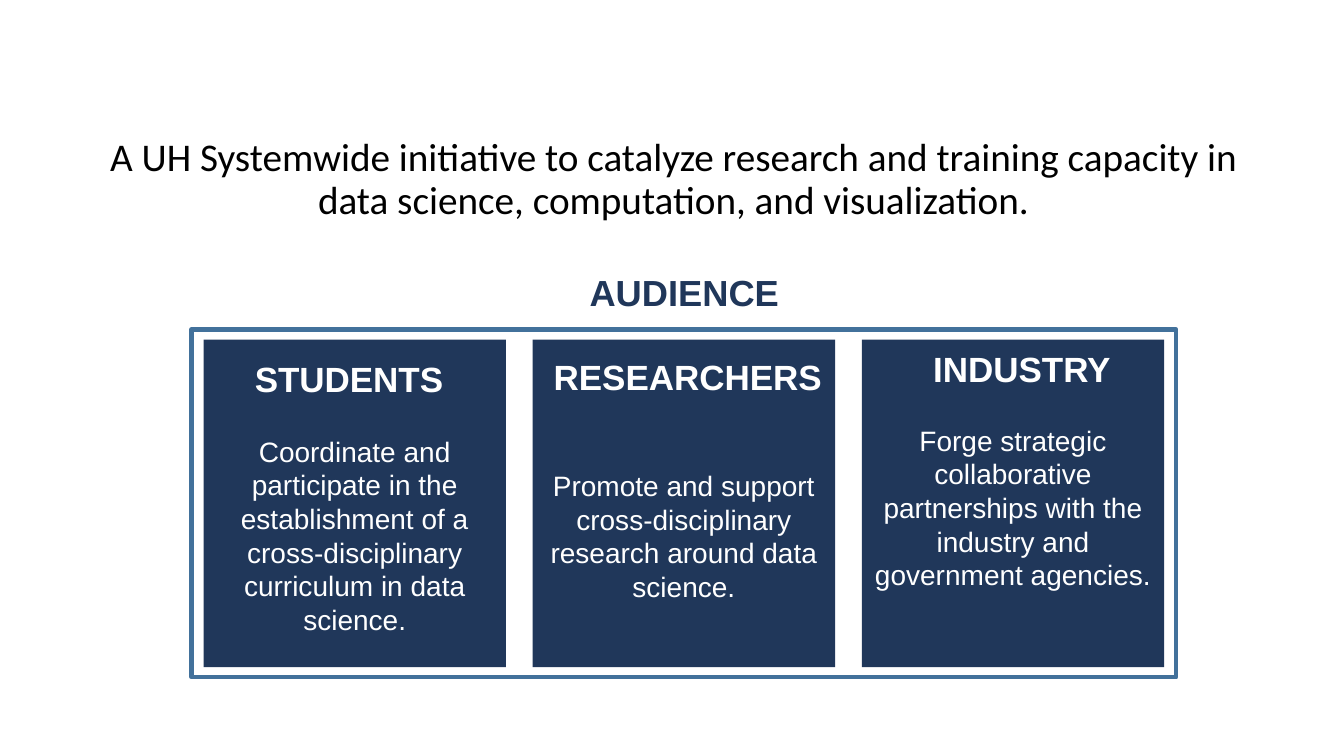
import dataclasses

import lxml.etree
import pptx
import pptx.dml.color
import pptx.enum.shapes
import pptx.enum.text
import pptx.oxml.ns
import pptx.util

Pt = pptx.util.Pt
CENTER = pptx.enum.text.PP_ALIGN.CENTER
LEFT = pptx.enum.text.PP_ALIGN.LEFT


@dataclasses.dataclass(frozen=True)
class Theme:
    navy: str = "20375A"
    frame_blue: str = "42719B"
    white: str = "FFFFFF"
    black: str = "000000"
    statement_font: str = "Calibri"
    label_font: str = "Arial"
    statement_size: float = 28
    audience_size: float = 25.9
    heading_size: float = 25
    goal_size: float = 20
    frame_width: float = 3


THEME = Theme()


@dataclasses.dataclass(frozen=True)
class Audience:
    """One card; heading is its (left, top, width) inside the card."""
    name: str
    goal: str
    heading: tuple
    goal_top: float
    goal_height: float


AUDIENCES = [
    Audience("STUDENTS",
             "Coordinate and participate in the establishment of a "
             "cross-disciplinary curriculum in data science.",
             (29.5, 9.4, 150.5), 64.1, 152.6),
    Audience("RESEARCHERS",
             "Promote and support cross-disciplinary research around data science.",
             (7.9, 7.9, 207.4), 88.6, 104.4),
    Audience("INDUSTRY",
             "Forge strategic collaborative partnerships with the industry "
             "and government agencies.",
             (43.9, 2.2, 142.6), 56.2, 128.2),
]


def rgb(color):
    return pptx.dml.color.RGBColor.from_string(color)


def write(frame, text, size, color, font=THEME.label_font, bold=False,
          align=CENTER, line_spacing=None):
    frame.word_wrap = True
    frame.auto_size = pptx.enum.text.MSO_AUTO_SIZE.NONE
    frame.text = text
    paragraph = frame.paragraphs[0]
    paragraph.alignment = align
    paragraph.space_before = Pt(0)
    if line_spacing:
        paragraph.line_spacing = line_spacing
    for run in paragraph.runs:
        run.font.name = font
        run.font.size = Pt(size)
        run.font.bold = bold
        run.font.color.rgb = rgb(color)


def add_label(slide, box, text, size, color, **style):
    label = slide.shapes.add_textbox(*map(Pt, box))
    write(label.text_frame, text, size, color, **style)


def add_rectangle(slide, box):
    rectangle = slide.shapes.add_shape(
        pptx.enum.shapes.MSO_SHAPE.RECTANGLE, *map(Pt, box))
    rectangle.shadow.inherit = False
    return rectangle


def place_statement(slide, box):
    statement = slide.placeholders[1]
    statement.left, statement.top, statement.width, statement.height = map(Pt, box)
    write(statement.text_frame, "A UH Systemwide initiative to catalyze research and "
          "training capacity in data science, computation, and visualization.",
          THEME.statement_size, THEME.black, font=THEME.statement_font,
          line_spacing=0.9)
    properties = statement.text_frame.paragraphs[0]._p.get_or_add_pPr()
    properties.set("marL", "0")
    properties.set("indent", "0")
    lxml.etree.SubElement(properties, pptx.oxml.ns.qn("a:buNone"))


def add_card(slide, box, audience):
    left, top, width, height = box
    card = add_rectangle(slide, box)
    card.fill.solid()
    card.fill.fore_color.rgb = rgb(THEME.navy)
    card.line.fill.background()

    heading_left, heading_top, heading_width = audience.heading
    add_label(slide, (left + heading_left, top + heading_top, heading_width, 37.4),
              audience.name, THEME.heading_size, THEME.white, bold=True, align=LEFT)
    add_label(slide, (left, top + audience.goal_top, width, audience.goal_height),
              audience.goal, THEME.goal_size, THEME.white)


def add_audience_panel(slide, box):
    left, top, width, height = box
    card_width, card_height, gap = 216, 234, 19.1
    row_width = len(AUDIENCES) * (card_width + gap) - gap
    first_left = left + (width - row_width) / 2
    card_top = top + (height - card_height) / 2

    add_label(slide, (left + 260.6, top - 39.6, 182.9, 33.8), "AUDIENCE",
              THEME.audience_size, THEME.navy, bold=True, line_spacing=0.8)
    for index, audience in enumerate(AUDIENCES):
        card_left = first_left + index * (card_width + gap)
        add_card(slide, (card_left, card_top, card_width, card_height), audience)

    frame = add_rectangle(slide, box)
    frame.fill.background()
    frame.line.color.rgb = rgb(THEME.frame_blue)
    frame.line.width = Pt(THEME.frame_width)


def main():
    presentation = pptx.Presentation()
    presentation.slide_width = Pt(960)
    presentation.slide_height = Pt(540)
    slide = presentation.slides.add_slide(presentation.slide_layouts[1])
    title = slide.shapes.title.element
    title.getparent().remove(title)
    place_statement(slide, (67, 95, 828, 74.2))
    add_audience_panel(slide, (136.8, 235.4, 703.4, 248.4))
    presentation.save("out.pptx")


if __name__ == "__main__":
    main()
